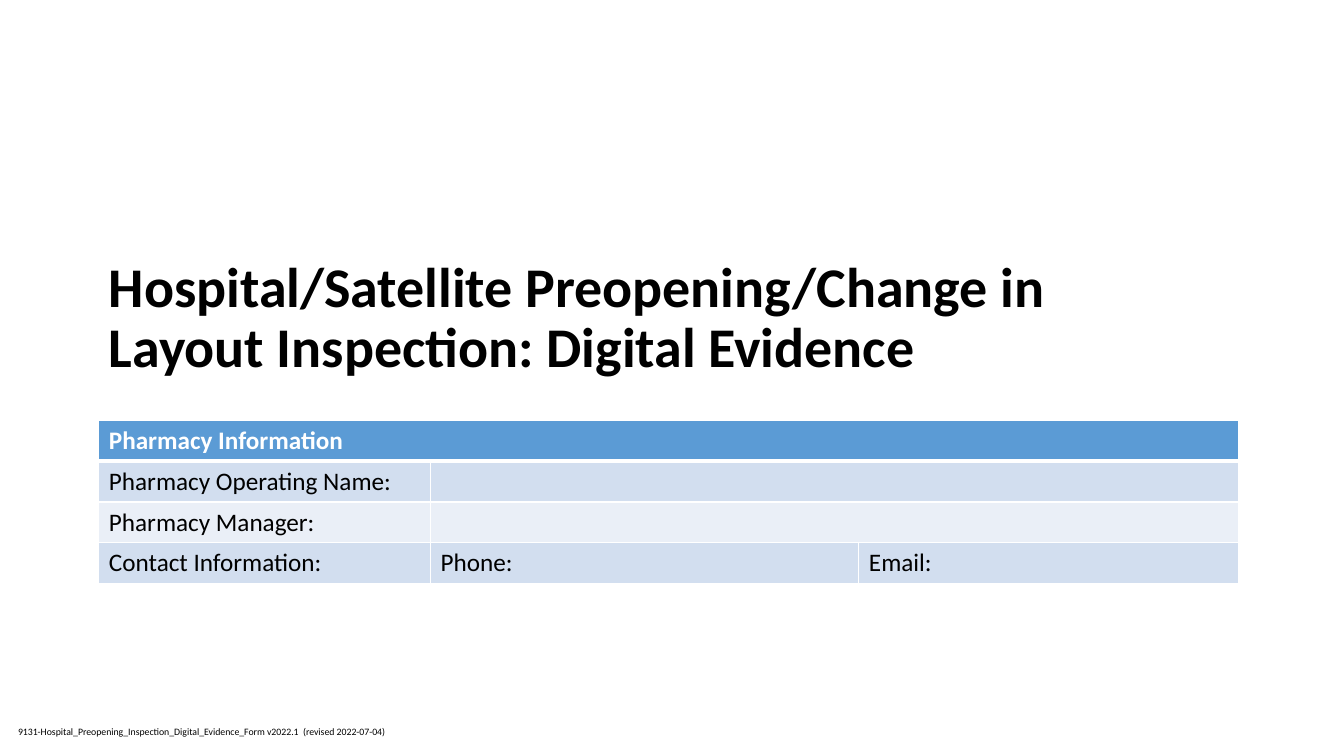
from lxml import etree
from pptx import Presentation
from pptx.dml.color import RGBColor
from pptx.enum.text import MSO_ANCHOR
from pptx.oxml.ns import qn
from pptx.util import Pt

BOTTOM = MSO_ANCHOR.BOTTOM
TOP = MSO_ANCHOR.TOP

FONT = "Calibri"
BLACK = RGBColor(0x00, 0x00, 0x00)
WHITE = RGBColor(0xFF, 0xFF, 0xFF)
HEADER_BLUE = RGBColor(0x5B, 0x9B, 0xD5)
BAND_DARK = RGBColor(0xD2, 0xDE, 0xEF)
BAND_LIGHT = RGBColor(0xEA, 0xEF, 0xF7)

COLUMN_WIDTHS = (236.9, 306, 271.4)
ROW_HEIGHT = 29.2
PHARMACY_ROWS = (
    ("Pharmacy Information", "", ""),
    ("Pharmacy Operating Name:", "", ""),
    ("Pharmacy Manager:", "", ""),
    ("Contact Information:", "Phone:", "Email:"),
)


def write_text(text_frame, text, *, size, color=BLACK, bold=False, line_spacing=1.0):
    paragraph = text_frame.paragraphs[0]
    paragraph.line_spacing = line_spacing
    paragraph.font.size = Pt(size)
    if text:
        run = paragraph.add_run()
        run.text = text
        run.font.name = FONT
        run.font.size = Pt(size)
        run.font.bold = bold
        run.font.color.rgb = color


def add_text_box(slide, box, text, *, anchor=TOP, **text_format):
    shape = slide.shapes.add_textbox(*(Pt(length) for length in box))
    shape.text_frame.word_wrap = True
    shape.text_frame.vertical_anchor = anchor
    write_text(shape.text_frame, text, **text_format)


def set_borders(cell, bottom_width):
    properties = cell._tc.get_or_add_tcPr()
    widths = {"a:lnL": 1, "a:lnR": 1, "a:lnT": 1, "a:lnB": bottom_width}
    for position, (tag, width) in enumerate(widths.items()):
        line = etree.Element(qn(tag), w=str(Pt(width)))
        fill = etree.SubElement(line, qn("a:solidFill"))
        etree.SubElement(fill, qn("a:srgbClr"), val=str(WHITE))
        properties.insert(position, line)


def add_pharmacy_table(slide, left, top):
    table = slide.shapes.add_table(
        len(PHARMACY_ROWS), len(COLUMN_WIDTHS), Pt(left), Pt(top),
        Pt(sum(COLUMN_WIDTHS)), Pt(ROW_HEIGHT * len(PHARMACY_ROWS)),
    ).table
    for column, width in zip(table.columns, COLUMN_WIDTHS):
        column.width = Pt(width)

    for row_index, texts in enumerate(PHARMACY_ROWS):
        table.rows[row_index].height = Pt(ROW_HEIGHT)
        is_header = row_index == 0
        band = BAND_DARK if row_index % 2 else BAND_LIGHT
        for column_index, text in enumerate(texts):
            cell = table.cell(row_index, column_index)
            cell.fill.solid()
            cell.fill.fore_color.rgb = HEADER_BLUE if is_header else band
            set_borders(cell, bottom_width=3 if is_header else 1)
            write_text(cell.text_frame, text, size=18, bold=is_header,
                       color=WHITE if is_header else BLACK)

    # Header spans the table; name and manager answers span two columns
    for row_index, first_column in ((0, 0), (1, 1), (2, 1)):
        table.cell(row_index, first_column).merge(table.cell(row_index, 2))


def build_form_slide(presentation):
    slide = presentation.slides.add_slide(presentation.slide_layouts[6])

    # Form reference
    add_text_box(
        slide, (5.8, 514.8, 311.8, 15.8),
        "9131-Hospital_Preopening_Inspection_Digital_Evidence_Form v2022.1  (revised 2022-07-04)",
        size=7,
    )

    # Title
    add_text_box(
        slide, (70.6, 101.5, 750.2, 173.5),
        "Hospital/Satellite Preopening/Change in Layout Inspection: Digital Evidence",
        anchor=BOTTOM, size=40, bold=True, line_spacing=0.9,
    )

    # Pharmacy details
    add_pharmacy_table(slide, 70.6, 300.2)


def main():
    presentation = Presentation()
    presentation.slide_width = Pt(960)
    presentation.slide_height = Pt(540)
    build_form_slide(presentation)
    presentation.save("out.pptx")


if __name__ == "__main__":
    main()
